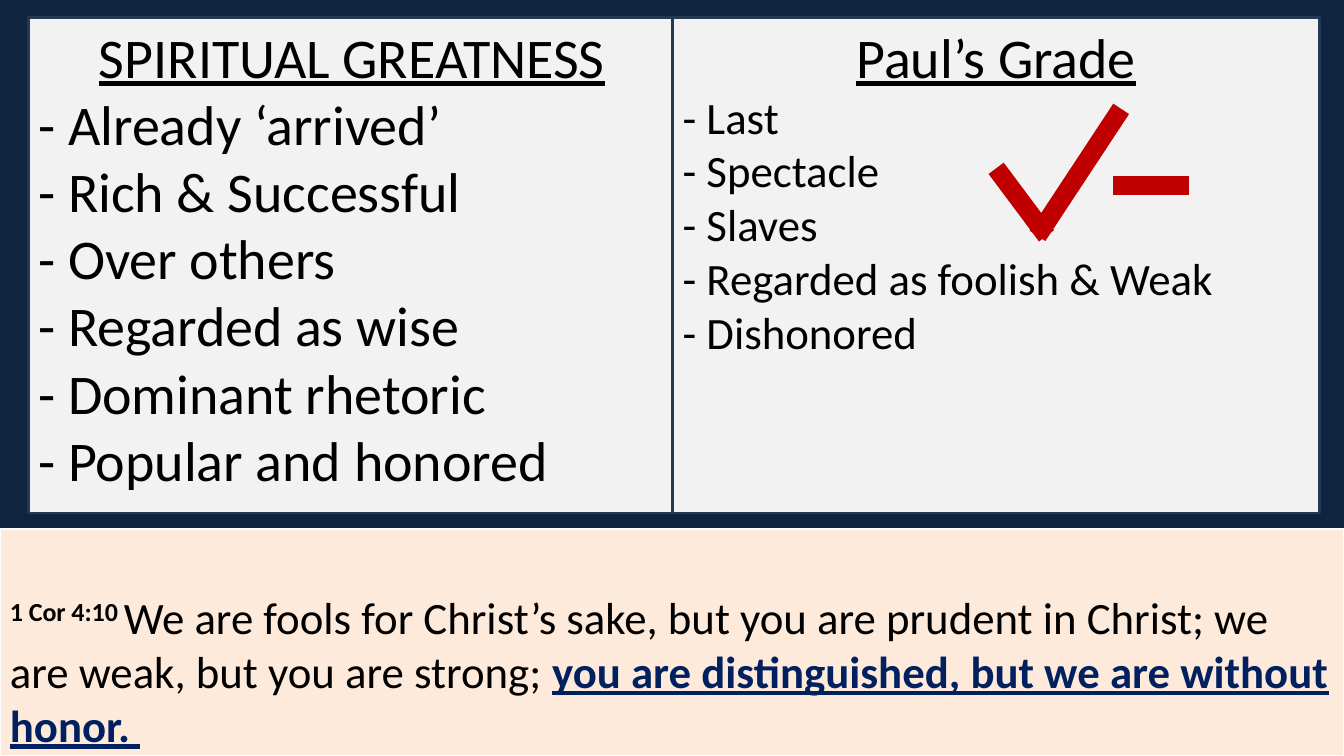
from pptx import Presentation
from pptx.dml.color import RGBColor
from pptx.enum.shapes import MSO_CONNECTOR, MSO_SHAPE
from pptx.enum.text import MSO_ANCHOR, MSO_AUTO_SIZE, PP_ALIGN
from pptx.oxml import parse_xml
from pptx.oxml.ns import nsdecls
from pptx.util import Inches, Pt

LEFT = ["Already ‘arrived’", "Rich & Successful", "Over others",
        "Regarded as wise", "Dominant rhetoric", "Popular and honored"]
RIGHT = ["Last", "Spectacle", "Slaves", "Regarded as foolish & Weak",
         "Dishonored"]


def color(value):
    return RGBColor.from_string(value)


def place(shape, x, y, w, h):
    shape.left, shape.top = Inches(x), Inches(y)
    shape.width, shape.height = Inches(w), Inches(h)


def paint(shape, fill, line, width):
    shape.fill.solid()
    shape.fill.fore_color.rgb = color(fill)
    shape.line.color.rgb = color(line)
    shape.line.width = Pt(width)


def write(para, text, size=32, ink="000000", bold=False, under=False, raised=0):
    """Add a run; raised lifts it by that percentage of its size."""
    run = para.add_run()
    run.text = text
    font = run.font
    font.name, font.size = "Calibri", Pt(size)
    font.bold, font.underline = bold, under
    font.color.rgb = color(ink)
    if raised:
        run._r.get_or_add_rPr().set("baseline", str(raised * 1000))


def panel(body, x, y, w, h, title, items, size):
    """Turn a body placeholder into a framed list with a centred heading."""
    place(body, x, y, w, h)
    paint(body, "F2F2F2", "233953", 2)
    frame = body.text_frame
    frame.auto_size = MSO_AUTO_SIZE.NONE
    frame.vertical_anchor = MSO_ANCHOR.TOP
    for i, text in enumerate([title] + [f"- {item}" for item in items]):
        para = frame.add_paragraph() if i else frame.paragraphs[0]
        para.space_before = Pt(0)
        para.alignment = PP_ALIGN.LEFT if i else PP_ALIGN.CENTER
        props = para._p.get_or_add_pPr()
        props.set("marL", "0")
        props.set("indent", "0")
        props.append(parse_xml(f"<a:buNone {nsdecls('a')}/>"))
        write(para, text, size=size if i else 40, under=not i)


def verse(slide, x, y, w, h):
    box = slide.shapes.add_shape(MSO_SHAPE.RECTANGLE, Inches(x), Inches(y),
                                 Inches(w), Inches(h))
    box.shadow.inherit = False
    paint(box, "FDEADA", "FFFFFF", 1.5)
    frame = box.text_frame
    frame.word_wrap = True
    frame.vertical_anchor = MSO_ANCHOR.BOTTOM
    para = frame.paragraphs[0]
    para.alignment = PP_ALIGN.LEFT
    write(para, "1 Cor 4:10 ", bold=True, raised=30)
    write(para, "We are fools for Christ’s sake, but you are prudent in "
                "Christ; we are weak, but you are strong; ")
    write(para, "you are distinguished, but we are without honor. ",
          ink="002060", bold=True, under=True)


def grade(slide, x, y):
    """Draw a check mark and a minus from the top left corner x, y."""
    strokes = [(0, 0.59, 0.5, 1.26), (0.41, 1.26, 1.24, 0),
               (1.16, 0.76, 1.91, 0.76)]
    for x1, y1, x2, y2 in strokes:
        stroke = slide.shapes.add_connector(
            MSO_CONNECTOR.STRAIGHT, Inches(x + x1), Inches(y + y1),
            Inches(x + x2), Inches(y + y2))
        stroke.line.color.rgb = color("C00000")
        stroke.line.width = Pt(13.5)
        stroke._element.spPr.append(
            parse_xml(f"<a:effectLst {nsdecls('a')}/>"))


def main():
    deck = Presentation()
    deck.slide_width, deck.slide_height = Inches(13.33), Inches(7.5)
    slide = deck.slides.add_slide(deck.slide_layouts[3])
    slide.background.fill.solid()
    slide.background.fill.fore_color.rgb = color("0F243E")
    head, left, right = slide.placeholders
    head._element.getparent().remove(head._element)
    verse(slide, 0, 5.25, 13.33, 2.25)
    panel(left, 0.28, 0.17, 6.42, 4.92, "SPIRITUAL GREATNESS", LEFT, 40)
    panel(right, 6.67, 0.17, 6.42, 4.92, "Paul’s Grade", RIGHT, 32)
    grade(slide, 9.88, 1.08)
    deck.save("out.pptx")


if __name__ == "__main__":
    main()
